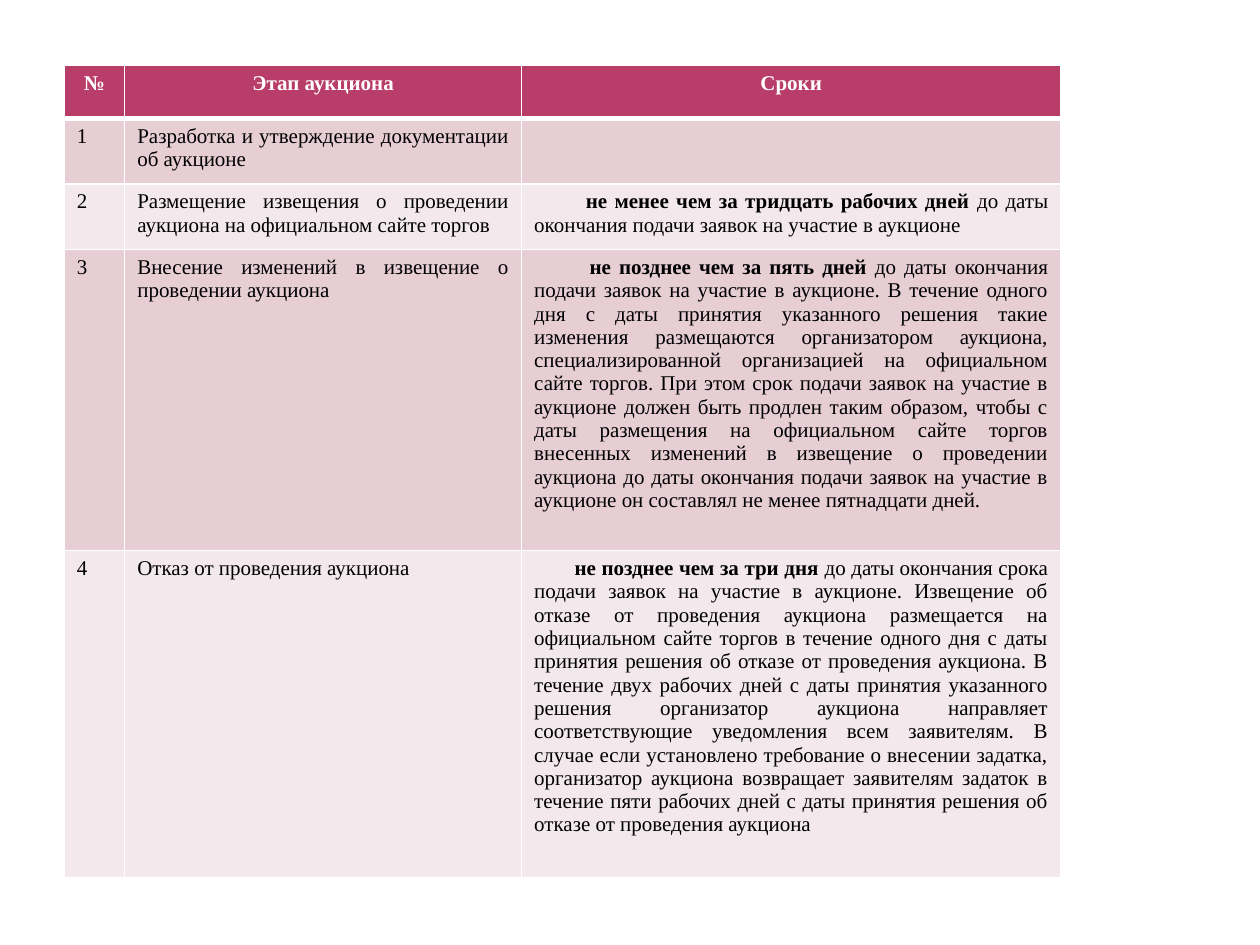
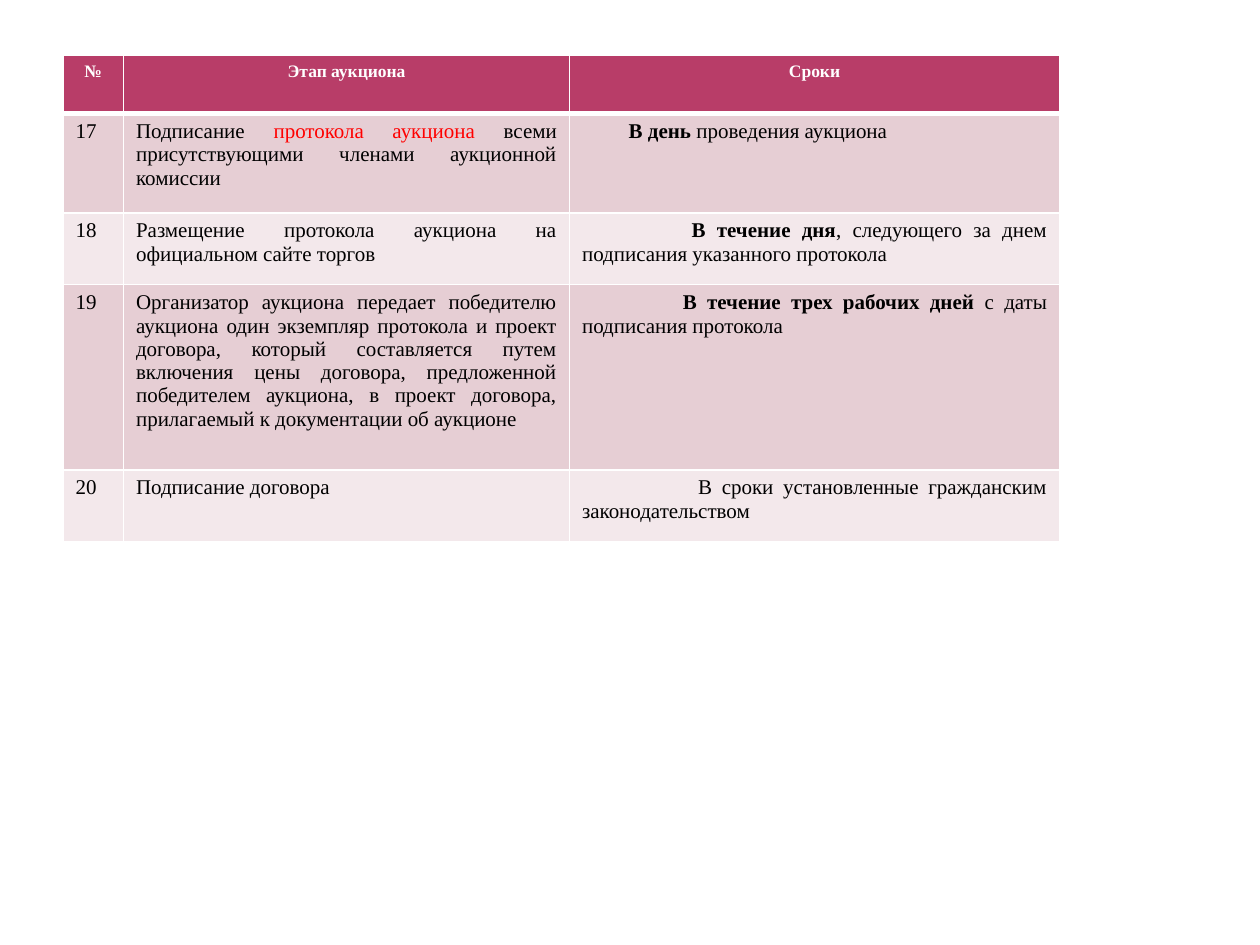
from lxml import etree
from pptx import Presentation
from pptx.dml.color import RGBColor
from pptx.enum.text import PP_ALIGN
from pptx.oxml.ns import qn
from pptx.util import Inches, Pt

# Shared look
FONT = "Times New Roman"
HUES = {"head": "B83D68", "odd": "E6CED4", "even": "F3E8EB",
        "white": "FFFFFF", "black": "000000", "red": "FF0000"}
HEADS = ["№", "Этап аукциона", "Сроки"]

# Content: rows of (number, stage runs, term runs, term indent in inches);
# a run is (text, marks), where marks may hold "b" for bold and "r" for red
FIRST = [
    ("1", [("Разработка и утверждение документации об аукционе", "")], [], 0),
    ("2", [("Размещение извещения о проведении аукциона на официальном сайте торгов", "")],
     [("не менее чем за тридцать рабочих дней ", "b"),
      ("до даты окончания подачи заявок на участие в аукционе", "")], 0.41),
    ("3", [("Внесение изменений в извещение о проведении аукциона", "")],
     [("не позднее чем за пять дней ", "b"),
      ("до даты окончания подачи заявок на участие в аукционе. В течение одного дня "
       "с даты принятия указанного решения такие изменения размещаются организатором "
       "аукциона, специализированной организацией на официальном сайте торгов. При этом "
       "срок подачи заявок на участие в аукционе должен быть продлен таким образом, чтобы "
       "с даты размещения на официальном сайте торгов внесенных изменений в извещение о "
       "проведении аукциона до даты окончания подачи заявок на участие в аукционе он "
       "составлял не менее пятнадцати дней.", "")], 0.44),
    ("4", [("Отказ от проведения аукциона", "")],
     [("не позднее чем за три дня ", "b"),
      ("до даты окончания срока подачи заявок на участие в аукционе. Извещение об отказе "
       "от проведения аукциона размещается на официальном сайте торгов в течение одного "
       "дня с даты принятия решения об отказе от проведения аукциона. В течение двух "
       "рабочих дней с даты принятия указанного решения организатор аукциона направляет "
       "соответствующие уведомления всем заявителям. В случае если установлено требование "
       "о внесении задатка, организатор аукциона возвращает заявителям задаток в течение "
       "пяти рабочих дней с даты принятия решения об отказе от проведения аукциона", "")],
     0.32),
]
LAST = [
    ("17", [("Подписание ", ""), ("протокола аукциона", "r"),
            (" всеми присутствующими членами аукционной комиссии", "")],
     [("В день ", "b"), ("проведения аукциона", "")], 0.37),
    ("18", [("Размещение протокола аукциона на официальном сайте торгов", "")],
     [("В течение дня", "b"),
      (", следующего за днем подписания указанного протокола", "")], 0.87),
    ("19", [("Организатор аукциона передает победителю аукциона один экземпляр протокола "
             "и проект договора, который составляется путем включения цены договора, "
             "предложенной победителем аукциона, в проект договора, прилагаемый к "
             "документации об аукционе", "")],
     [("В течение трех рабочих дней ", "b"), ("с даты подписания протокола", "")], 0.8),
    ("20", [("Подписание договора", "")],
     [("В сроки установленные гражданским законодательством", "")], 0.92),
]
SLIDES = [
    {"rows": FIRST, "at": (0.51, 0.52), "cols": [0.48, 3.15, 4.28],
     "tall": [0.42, 0.52, 0.52, 2.39, 2.6], "size": 12, "num": PP_ALIGN.LEFT},
    {"rows": LAST, "at": (0.5, 0.44), "cols": [0.48, 3.54, 3.89],
     "tall": [0.46, 0.79, 0.57, 1.47, 0.57], "size": 10, "num": PP_ALIGN.JUSTIFY},
]


def hue(name):
    return RGBColor.from_string(HUES[name])


def write(cell, runs, size=12, color="black", align=PP_ALIGN.JUSTIFY, indent=0):
    """Fill a cell with one paragraph of marked runs."""
    para = cell.text_frame.paragraphs[0]
    para.alignment = align
    if indent:
        props = para._p.get_or_add_pPr()
        props.set("marL", "0")
        props.set("indent", str(Inches(indent)))
    for words, marks in runs:
        run = para.add_run()
        run.text = words
        font = run.font
        font.name, font.size, font.bold = FONT, Pt(size), "b" in marks
        font.color.rgb = hue("red" if "r" in marks else color)


def paint(cell, fill, row):
    """White borders, thick below the header, then the fill."""
    props = cell._tc.get_or_add_tcPr()
    thick = {("B", 0), ("T", 1)}
    for side in "LRTB":
        width = Pt(3 if (side, row) in thick else 1)
        line = etree.SubElement(props, qn("a:ln" + side), w=str(width))
        solid = etree.SubElement(line, qn("a:solidFill"))
        etree.SubElement(solid, qn("a:srgbClr"), val=HUES["white"])
    cell.fill.solid()
    cell.fill.fore_color.rgb = hue(fill)


def build(deck, plan):
    slide = deck.slides.add_slide(deck.slide_layouts[6])
    cols, tall = plan["cols"], plan["tall"]
    box = [Inches(v) for v in (*plan["at"], sum(cols), sum(tall))]
    table = slide.shapes.add_table(len(tall), len(cols), *box).table
    table.horz_banding = False
    for col, width in zip(table.columns, cols):
        col.width = Inches(width)
    for row, height in zip(table.rows, tall):
        row.height = Inches(height)

    # Header
    for c, head in enumerate(HEADS):
        cell = table.cell(0, c)
        paint(cell, "head", 0)
        write(cell, [(head, "b")], size=plan["size"], color="white", align=PP_ALIGN.CENTER)

    # Stages
    for r, (num, stage, term, indent) in enumerate(plan["rows"], 1):
        for c in range(len(cols)):
            paint(table.cell(r, c), "odd" if r % 2 else "even", r)
        write(table.cell(r, 0), [(num, "")], align=plan["num"])
        write(table.cell(r, 1), stage)
        write(table.cell(r, 2), term, indent=indent)


def main():
    deck = Presentation()
    deck.slide_width, deck.slide_height = Inches(10), Inches(7.5)
    for plan in SLIDES:
        build(deck, plan)
    deck.save("out.pptx")


if __name__ == "__main__":
    main()
